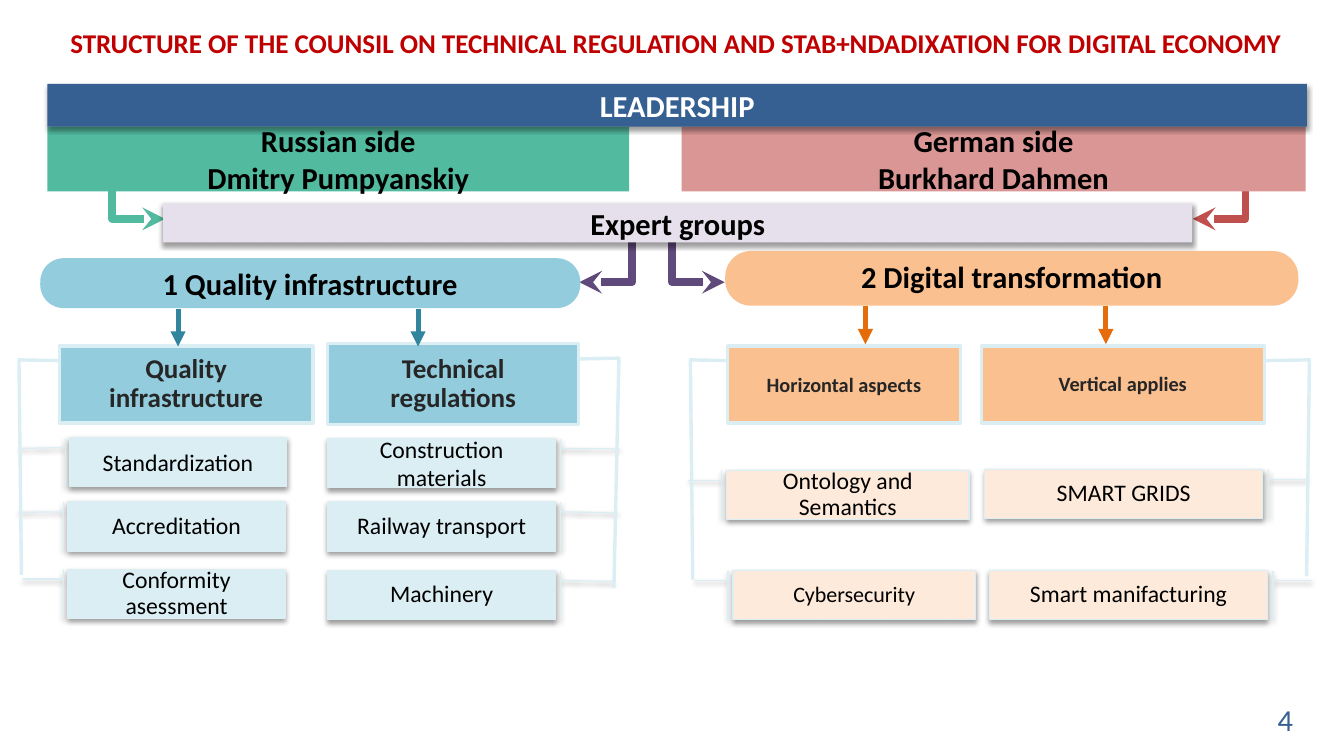
from dataclasses import dataclass

from lxml.etree import SubElement
from pptx import Presentation
from pptx.dml.color import RGBColor
from pptx.enum.shapes import MSO_CONNECTOR, MSO_SHAPE
from pptx.enum.text import MSO_ANCHOR, PP_ALIGN
from pptx.oxml.ns import qn
from pptx.shapes.autoshape import Shape
from pptx.slide import Slide
from pptx.util import Cm, Pt


@dataclass(frozen=True)
class Theme:
    font: str = "Calibri"
    black: str = "000000"
    charcoal: str = "262626"
    white: str = "FFFFFF"
    title: str = "C00000"
    navy: str = "376092"
    green: str = "52BA9F"
    pink: str = "D99694"
    red: str = "C0504D"
    lilac: str = "E6E0EC"
    purple: str = "604A7B"
    blue: str = "93CDDD"
    pale_blue: str = "DBEEF4"
    teal: str = "31859C"
    orange: str = "FAC090"
    pale_orange: str = "FDEADA"
    dark_orange: str = "E46C0A"
    banner_size: int = 18
    heading_size: int = 16
    topic_size: int = 14
    small_topic_size: int = 13
    small_heading_size: int = 12


THEME = Theme()
TOPIC_HEIGHT = 1.02
ELBOW_WIDTH, ELBOW_HEIGHT = 2.2, 1.16
ARROW_LENGTH = 0.79


@dataclass(frozen=True)
class Box:
    text: str
    left: float
    top: float
    width: float
    height: float
    fill: str
    kind: MSO_SHAPE = MSO_SHAPE.RECTANGLE
    size: int = THEME.banner_size
    color: str = THEME.black
    bold: bool = True
    space_after: float = 0
    line_width: float = 0
    shadow: bool = False
    flipped: bool = False
    adjustments: tuple[float, ...] = ()


@dataclass(frozen=True)
class Topic:
    text: str
    left: float
    top: float
    leader_y: float
    leader_x: float
    space_after: float = 4.9
    size: int = THEME.topic_size


@dataclass(frozen=True)
class Column:
    heading: str
    left: float
    top: float
    width: float
    height: float
    fill: str
    size: int
    space_after: float
    leader_end: tuple[float, float]
    flipped: bool
    topic_width: float
    topic_fill: str
    topics: tuple[Topic, ...]


@dataclass(frozen=True)
class Arrow:
    left: float
    top: float
    across: float
    down: float
    color: str
    width: float
    head: str
    kind: MSO_CONNECTOR


def format_text(shape: Shape, text: str, size: int, color: str, bold: bool,
                alignment: PP_ALIGN = PP_ALIGN.CENTER, space_after: float = 0) -> None:
    shape.text_frame.text = text
    for paragraph in shape.text_frame.paragraphs:
        paragraph.alignment = alignment
        if space_after:
            paragraph.line_spacing = 0.9
            paragraph.space_after = Pt(space_after)
        for run in paragraph.runs:
            run.font.name = THEME.font
            run.font.size = Pt(size)
            run.font.bold = bold
            run.font.color.rgb = RGBColor.from_string(color)


def add_shadow(shape: Shape) -> None:
    effects = shape.element.spPr.find(qn("a:effectLst"))
    shadow = SubElement(effects, qn("a:outerShdw"), blurRad=str(Pt(3.1)),
                        dist=str(Pt(1.6)), dir="5400000", rotWithShape="0")
    color = SubElement(shadow, qn("a:srgbClr"), val=THEME.black)
    SubElement(color, qn("a:alpha"), val="38000")


def draw_box(slide: Slide, box: Box) -> None:
    shape = slide.shapes.add_shape(
        box.kind, Cm(box.left), Cm(box.top), Cm(box.width), Cm(box.height))
    for index, value in enumerate(box.adjustments):
        shape.adjustments[index] = value
    shape.fill.solid()
    shape.fill.fore_color.rgb = RGBColor.from_string(box.fill)
    if box.line_width:
        shape.line.color.rgb = RGBColor.from_string(THEME.pale_blue)
        shape.line.width = Pt(box.line_width)
    else:
        shape.line.fill.background()
    shape.shadow.inherit = False
    if box.shadow:
        add_shadow(shape)
    if box.flipped:
        shape.element.spPr.find(qn("a:xfrm")).set("flipH", "1")
    shape.text_frame.word_wrap = True
    shape.text_frame.vertical_anchor = MSO_ANCHOR.MIDDLE
    format_text(shape, box.text, box.size, box.color, box.bold, space_after=box.space_after)


def draw_column(slide: Slide, column: Column) -> None:
    """Draw the topics with their leader lines, then the heading with its bracket."""
    for topic in column.topics:
        draw_box(slide, Box(
            topic.text, topic.left, topic.top, column.topic_width, TOPIC_HEIGHT,
            column.topic_fill, MSO_SHAPE.LINE_CALLOUT_1_BORDER_AND_ACCENT_BAR,
            topic.size, bold=False, space_after=topic.space_after, line_width=0.75,
            shadow=True, flipped=column.flipped,
            adjustments=(0.2, -0.02, topic.leader_y, topic.leader_x)))
    draw_box(slide, Box(
        column.heading, column.left, column.top, column.width, column.height,
        column.fill, MSO_SHAPE.LINE_CALLOUT_2, column.size, THEME.charcoal,
        space_after=column.space_after, line_width=2, flipped=column.flipped,
        adjustments=(0.19, 0, 0.18, -0.16, *column.leader_end)))


def draw_arrow(slide: Slide, arrow: Arrow) -> None:
    connector = slide.shapes.add_connector(
        arrow.kind, Cm(arrow.left), Cm(arrow.top),
        Cm(arrow.left + arrow.across), Cm(arrow.top + arrow.down))
    connector.line.color.rgb = RGBColor.from_string(arrow.color)
    connector.line.width = Pt(arrow.width)
    properties = connector.element.spPr
    SubElement(properties.find(qn("a:ln")), qn("a:tailEnd"), type=arrow.head)
    SubElement(properties, qn("a:effectLst"))


def draw_label(slide: Slide, text: str, left: float, top: float, width: float, height: float,
               size: int, color: str, bold: bool, alignment: PP_ALIGN, wrap: bool) -> None:
    label = slide.shapes.add_textbox(Cm(left), Cm(top), Cm(width), Cm(height))
    label.text_frame.word_wrap = wrap
    format_text(label, text, size, color, bold, alignment)


COLUMNS = (
    Column("Quality infrastructure", 1.24, 7.21, 5.28, 1.6, THEME.blue, THEME.heading_size, 4.2,
           (2.98, -0.15), False, 4.52, THEME.pale_blue, (
               Topic("Standardization", 1.45, 9.12, 0.22, -0.23, space_after=0),
               Topic("Accreditation", 1.42, 10.46, 0.21, -0.23),
               Topic("Conformity asessment", 1.42, 11.86, 0.2, -0.21))),
    Column("Technical regulations", 6.83, 7.16, 5.23, 1.68, THEME.blue, THEME.heading_size, 4.2,
           (3.03, -0.14), True, 4.75, THEME.pale_blue, (
               Topic("Construction materials", 6.83, 9.14, 0.21, -0.28, space_after=0),
               Topic("Railway transport", 6.83, 10.46, 0.22, -0.27),
               Topic("Machinery", 6.83, 11.89, 0.22, -0.26))),
    Column("Horizontal aspects", 15.16, 7.21, 4.85, 1.6, THEME.orange, THEME.small_heading_size, 0,
           (3.04, -0.15), False, 5.05, THEME.pale_orange, (
               Topic("Ontology and Semantics", 15.14, 9.8, 0.2, -0.16),
               Topic("Cybersecurity", 15.27, 11.89, 0.2, -0.16, 4.6, THEME.small_topic_size))),
    Column("Vertical applies", 20.45, 7.21, 5.89, 1.6, THEME.orange, THEME.small_heading_size, 4.2,
           (3, -0.15), True, 5.79, THEME.pale_orange, (
               Topic("SMART GRIDS", 20.52, 9.78, 0.2, -0.16),
               Topic("Smart manifacturing", 20.62, 11.89, 0.2, -0.16))),
)
ELBOWS = tuple(
    Arrow(left, top, direction * ELBOW_WIDTH, ELBOW_HEIGHT, color, 4.5, "stealth",
          MSO_CONNECTOR.ELBOW)
    for left, top, direction, color in (
        (1.24, 3.4, 1, THEME.green), (27.05, 3.4, -1, THEME.red),
        (14.27, 4.72, -1, THEME.purple), (12.9, 4.72, 1, THEME.purple)))
BANNERS = (
    Box("Russian side\nDmitry Pumpyanskiy", 0.99, 2.64, 12.12, 1.35, THEME.green),
    Box("German side\nBurkhard Dahmen", 14.2, 2.64, 13, 1.35, THEME.pink),
    Box("LEADERSHIP", 0.99, 1.75, 26.24, 0.89, THEME.navy, color=THEME.white, shadow=True),
    Box("2 Digital transformation", 15.11, 5.23, 11.94, 1.14, THEME.orange,
        MSO_SHAPE.ROUNDED_RECTANGLE, space_after=6.3, adjustments=(0.47,)),
    Box("1 Quality infrastructure", 0.84, 5.38, 11.25, 1.04, THEME.blue,
        MSO_SHAPE.ROUNDED_RECTANGLE, adjustments=(0.47,)),
    Box("Expert groups", 3.4, 4.24, 21.44, 0.81, THEME.lilac, shadow=True),
)
DOWN_ARROWS = tuple(
    Arrow(left, top, 0, ARROW_LENGTH, color, 3, "triangle", MSO_CONNECTOR.STRAIGHT)
    for left, top, color in (
        (3.71, 6.43, THEME.teal), (8.71, 6.43, THEME.teal),
        (18.03, 6.38, THEME.dark_orange), (23.04, 6.38, THEME.dark_orange)))


def main() -> None:
    presentation = Presentation()
    presentation.slide_width, presentation.slide_height = Cm(28), Cm(15.75)
    slide = presentation.slides.add_slide(presentation.slide_layouts[6])
    draw_label(slide, "STRUCTURE OF THE COUNSIL ON TECHNICAL REGULATION AND "
               "STAB+NDADIXATION FOR DIGITAL ECONOMY", 0.33, 0.43, 27.51, 0.91,
               THEME.heading_size, THEME.title, True, PP_ALIGN.CENTER, True)
    for column in COLUMNS:
        draw_column(slide, column)
    for elbow in ELBOWS:
        draw_arrow(slide, elbow)
    for banner in BANNERS:
        draw_box(slide, banner)
    for arrow in DOWN_ARROWS:
        draw_arrow(slide, arrow)
    draw_label(slide, "4", 26.37, 14.48, 0.81, 1.02, THEME.banner_size, THEME.navy,
               False, PP_ALIGN.LEFT, False)
    presentation.save("out.pptx")


if __name__ == "__main__":
    main()
